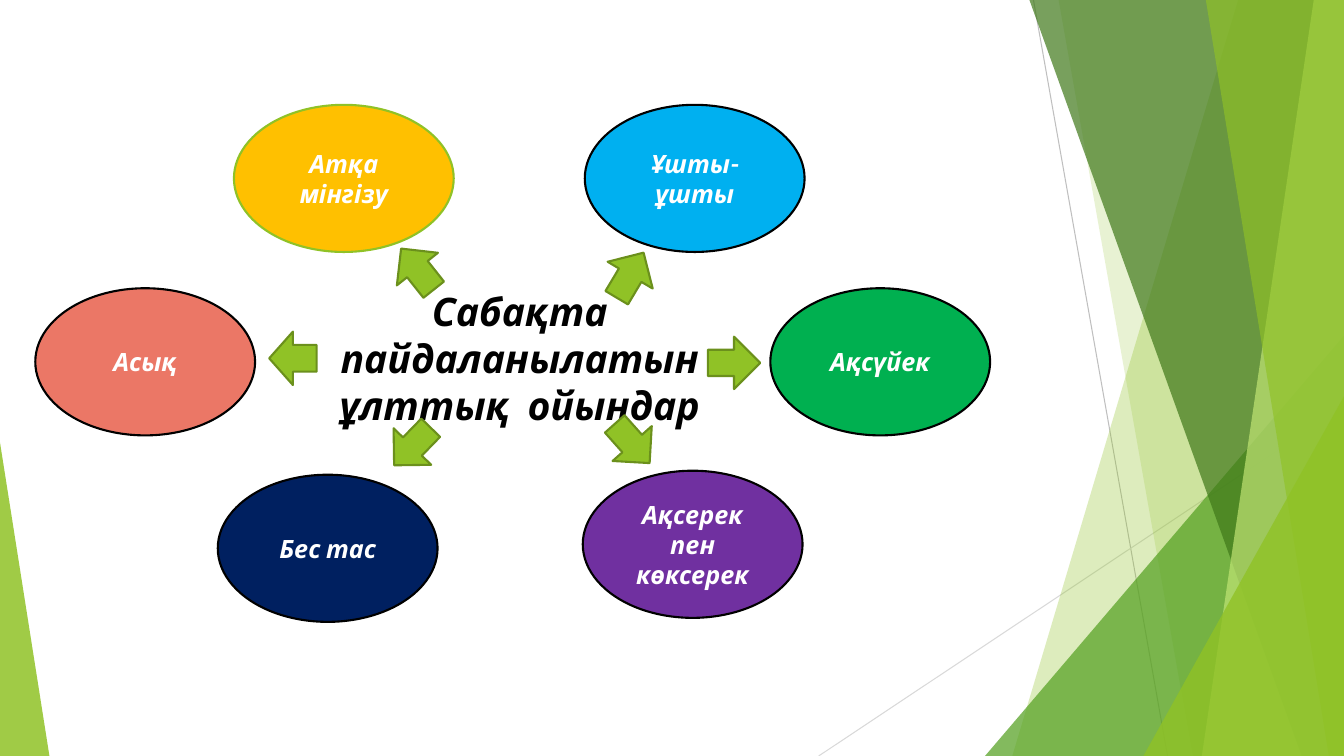
from lxml import etree
from pptx import Presentation
from pptx.dml.color import RGBColor
from pptx.enum.shapes import MSO_CONNECTOR as Connector, MSO_SHAPE as Shape
from pptx.enum.text import MSO_ANCHOR as Anchor, PP_ALIGN as Align
from pptx.oxml.ns import qn
from pptx.util import Inches, Pt

WIDTH, HEIGHT = 13.33, 7.5
FONT = "Karla"
BLACK = RGBColor(0x00, 0x00, 0x00)
WHITE = RGBColor(0xFF, 0xFF, 0xFF)
GREEN = RGBColor(0x90, 0xC2, 0x26)
MID_GREEN = RGBColor(0x54, 0xA0, 0x21)
DEEP_GREEN = RGBColor(0x3F, 0x78, 0x19)
PALE_GREEN = RGBColor(0xC0, 0xE4, 0x74)
ARROW_EDGE = RGBColor(0x6B, 0x90, 0x1C)
GRAY = RGBColor(0xBF, 0xBF, 0xBF)
LIGHT_GRAY = RGBColor(0xD9, 0xD9, 0xD9)
AMBER = RGBColor(0xFF, 0xC0, 0x00)
SKY = RGBColor(0x00, 0xB0, 0xF0)
CORAL = RGBColor(0xEB, 0x77, 0x66)
NAVY = RGBColor(0x00, 0x20, 0x60)
PURPLE = RGBColor(0x70, 0x30, 0xA0)
EMERALD = RGBColor(0x00, 0xB0, 0x50)

OVAL_WIDTH, OVAL_HEIGHT = 2.18, 1.46
GAMES = [
    ("Атқа мінгізу", 2.32, 1.04, AMBER, GREEN),
    ("Ұшты- ұшты", 5.8, 1.04, SKY, BLACK),
    ("Асық", 0.35, 2.86, CORAL, BLACK),
    ("Бес тас", 2.16, 4.71, NAVY, BLACK),
    ("Ақсерек пен көксерек", 5.78, 4.67, PURPLE, BLACK),
    ("Ақсүйек", 7.64, 2.86, EMERALD, BLACK),
]
UP_ARROWS = [
    (5.99, 2.47, 30.8),
    (3.88, 2.41, 321.6),
    (7.02, 3.34, 90),
    (6.01, 4.14, 138.3),
    (3.83, 4.17, 224.2),
]


def paint(shape, color, opacity=100, edge=None):
    """Fill a shape, with an outline only when an edge colour is given."""
    shape.shadow.inherit = False
    shape.fill.solid()
    shape.fill.fore_color.rgb = color
    if opacity < 100:
        tint = shape.fill._xPr.find(qn("a:solidFill"))[0]
        etree.SubElement(tint, qn("a:alpha")).set("val", str(opacity * 1000))
    if edge is None:
        shape.line.fill.background()
    else:
        shape.line.color.rgb = edge
        shape.line.width = Pt(1.5)


def add_preset(slide, kind, left, top, width, height):
    """Add a preset shape at a box given in inches."""
    return slide.shapes.add_shape(kind, *map(Inches, (left, top, width, height)))


def write(frame, lines, size, color):
    """Write centred bold italic paragraphs into a wrapping frame."""
    frame.word_wrap = True
    frame.text = "\n".join(lines)
    for paragraph in frame.paragraphs:
        paragraph.alignment = Align.CENTER
        font = paragraph.font
        font.name, font.size = FONT, Pt(size)
        font.bold = font.italic = True
        font.color.rgb = color


def add_ray(slide, start, end, color):
    """Draw one thin background line."""
    ray = slide.shapes.add_connector(
        Connector.STRAIGHT, *map(Inches, (*start, *end)))
    ray.line.color.rgb = color
    ray.line.width = Pt(0.75)
    etree.SubElement(ray._element.spPr, qn("a:effectLst"))


def add_facet(slide, top_x, bottom_x, color, opacity):
    """Draw a full-height facet from its slanted left side to the right edge."""
    corners = [(WIDTH, 0), (WIDTH, HEIGHT), (bottom_x, HEIGHT)]
    outline = slide.shapes.build_freeform(Inches(top_x), 0)
    outline.add_line_segments([(Inches(x), Inches(y)) for x, y in corners])
    paint(outline.convert_to_shape(), color, opacity)


def add_corner(slide, left, width, height, apex, color, opacity):
    """Draw a triangle standing on the bottom edge of the slide."""
    corner = add_preset(
        slide, Shape.ISOSCELES_TRIANGLE, left, HEIGHT - height, width, height)
    corner.adjustments[0] = apex
    paint(corner, color, opacity)


def add_backdrop(slide):
    """Build the layered green decoration."""
    add_ray(slide, (10.25, 0), (11.58, HEIGHT), GRAY)
    add_ray(slide, (WIDTH, 4.03), (8.12, HEIGHT), LIGHT_GRAY)
    add_facet(slide, 12.28, 10.04, GREEN, 30)
    add_facet(slide, 10.5, 11.83, GREEN, 20)
    add_corner(slide, 9.77, 3.56, 4.17, 1, MID_GREEN, 72)
    add_facet(slide, 10.21, 12.91, DEEP_GREEN, 70)
    add_facet(slide, 13.03, 11.92, PALE_GREEN, 70)
    add_facet(slide, 11.96, 13.18, GREEN, 65)
    add_corner(slide, 11.34, 1.99, 3.57, 1, GREEN, 80)
    add_corner(slide, 0, 0.49, 3.11, 0, GREEN, 85)


def add_topic(slide, left, top, width, height):
    """Place the central topic text."""
    topic = slide.shapes.add_textbox(*map(Inches, (left, top, width, height)))
    lines = ["Сабақта пайдаланылатын", "ұлттық  ойындар"]
    write(topic.text_frame, lines, 28, BLACK)


def add_game(slide, name, left, top, color, edge):
    """Place one oval naming a game."""
    oval = add_preset(slide, Shape.OVAL, left, top, OVAL_WIDTH, OVAL_HEIGHT)
    paint(oval, color, edge=edge)
    oval.text_frame.vertical_anchor = Anchor.MIDDLE
    write(oval.text_frame, [name], 18, WHITE)


def add_arrow(slide, left, top, angle, kind=Shape.UP_ARROW, width=0.52, height=0.52):
    """Place one rotated arrow pointing from the topic to a game."""
    arrow = add_preset(slide, kind, left, top, width, height)
    arrow.rotation = angle
    paint(arrow, GREEN, edge=ARROW_EDGE)


def main():
    """Build and save the slide."""
    deck = Presentation()
    deck.slide_width, deck.slide_height = Inches(WIDTH), Inches(HEIGHT)
    slide = deck.slides.add_slide(deck.slide_layouts[6])
    add_backdrop(slide)
    add_topic(slide, 2.94, 2.8, 4.43, 1.51)
    for game in GAMES:
        add_game(slide, *game)
    add_arrow(slide, 2.64, 3.32, 90, Shape.DOWN_ARROW, 0.53, 0.47)
    for arrow in UP_ARROWS:
        add_arrow(slide, *arrow)
    deck.save("out.pptx")


if __name__ == "__main__":
    main()
